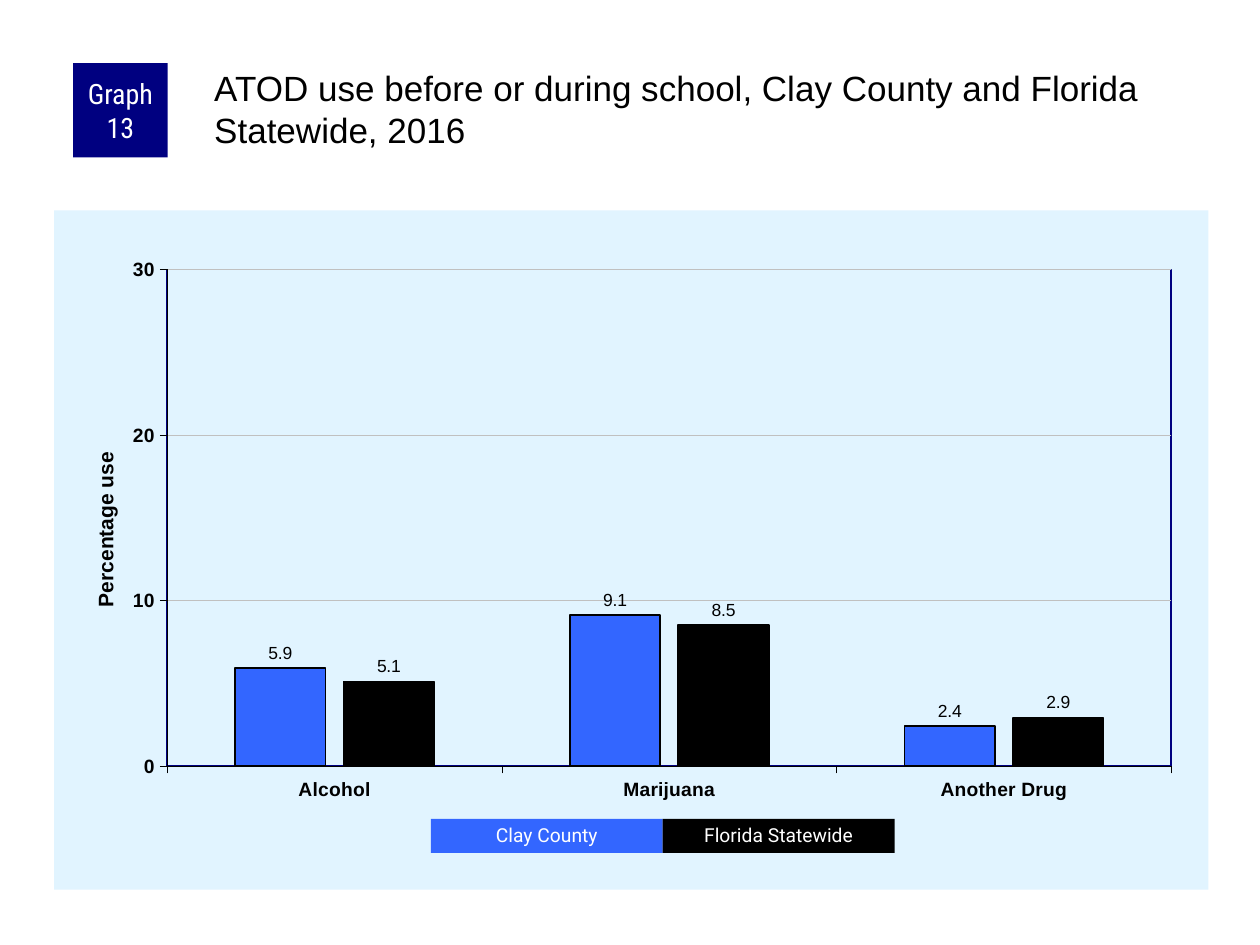
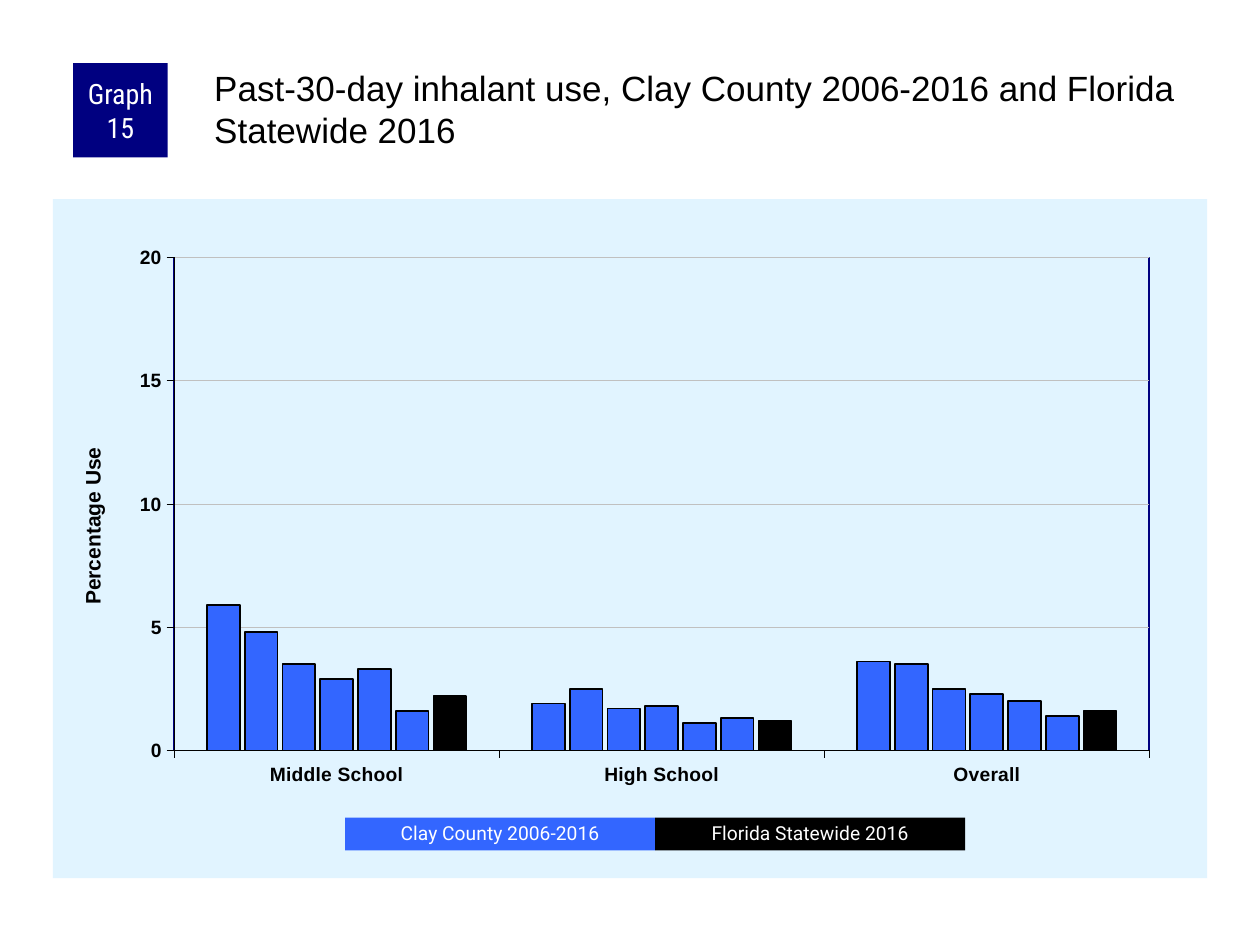
from lxml import etree
from pptx import Presentation
from pptx import util as u
from pptx.chart.data import CategoryChartData
from pptx.dml.color import RGBColor
from pptx.enum import chart as ch, shapes, text
from pptx.oxml.ns import qn

NAVY = RGBColor(0x00, 0x00, 0x80)
BLUE = RGBColor(0x33, 0x66, 0xFF)
PALE = RGBColor(0xE1, 0xF4, 0xFF)
GREY = RGBColor(0xC0, 0xC0, 0xC0)
BLACK = RGBColor(0x00, 0x00, 0x00)
WHITE = RGBColor(0xFF, 0xFF, 0xFF)


# Text
def style(font, size, color=BLACK, face="Arial", bold=False):
    font.size, font.name, font.bold = u.Pt(size), face, bold
    font.color.rgb = color


def put(frame, words, align=text.PP_ALIGN.LEFT, anchor=text.MSO_ANCHOR.MIDDLE,
        inset=(0, 0, 0, 0), spacing=1.0, **font):
    frame.word_wrap = True
    frame.auto_size = text.MSO_AUTO_SIZE.NONE
    frame.vertical_anchor = anchor
    (frame.margin_left, frame.margin_top,
     frame.margin_right, frame.margin_bottom) = map(u.Inches, inset)
    para = frame.paragraphs[0]
    para.alignment, para.line_spacing = align, spacing
    run = para.add_run()
    run.text = words
    style(run.font, **font)


# Shapes
def add_box(slide, at, fill, words, **format):
    box = slide.shapes.add_shape(shapes.MSO_SHAPE.RECTANGLE, *map(u.Inches, at))
    box.shadow.inherit = False
    box.fill.solid()
    box.fill.fore_color.rgb = fill
    box.line.fill.background()
    put(box.text_frame, words, align=text.PP_ALIGN.CENTER, color=WHITE, **format)


def add_head(slide, number, words):
    title = slide.shapes.title
    title.left, title.top, title.width, title.height = map(
        u.Inches, (1.67, 0.5, 7.92, 0.83))
    put(title.text_frame, words, anchor=text.MSO_ANCHOR.TOP,
        inset=(0.03, 0.03, 0, 0), size=20)
    add_box(slide, (0.58, 0.5, 0.75, 0.75), NAVY, f"Graph {number}",
            inset=(0.05, 0, 0.05, 0), size=16, face="Roboto Condensed")


def add_key(slide, left, top, width, height, names):
    for i, (name, fill) in enumerate(zip(names, (BLUE, BLACK))):
        add_box(slide, (left + i * width, top, width, height), fill, name,
                spacing=0.9, size=11, face="Roboto")


# Chart parts that need XML
def place(node, index, inner=False, **spots):
    for old in node.findall(qn("c:layout")):
        node.remove(old)
    layout = etree.Element(qn("c:layout"))
    manual = etree.SubElement(layout, qn("c:manualLayout"))
    if inner:
        etree.SubElement(manual, qn("c:layoutTarget"), val="inner")
    for side in "xy":
        etree.SubElement(manual, qn(f"c:{side}Mode"), val="edge")
    for side, value in spots.items():
        etree.SubElement(manual, qn(f"c:{side}"), val=str(value))
    node.insert(index, layout)


def paint(parent, color):
    solid = etree.SubElement(parent, qn("a:solidFill"))
    etree.SubElement(solid, qn("a:srgbClr"), val=str(color))


def back(chart):
    room = chart.element.find(qn("c:chart"))
    area = etree.Element(qn("c:spPr"))
    paint(area, PALE)
    edge = etree.SubElement(area, qn("a:ln"))
    etree.SubElement(edge, qn("a:noFill"))
    room.addnext(area)
    plot = room.find(qn("c:plotArea"))
    frame = etree.SubElement(plot, qn("c:spPr"))
    etree.SubElement(frame, qn("a:noFill"))
    paint(etree.SubElement(frame, qn("a:ln"), w=str(u.Pt(1))), NAVY)
    return plot


def set_line(line, color, width):
    line.color.rgb, line.width = color, u.Pt(width)


def set_axis(axis):
    axis.major_tick_mark = ch.XL_TICK_MARK.OUTSIDE
    axis.minor_tick_mark = ch.XL_TICK_MARK.NONE
    style(axis.tick_labels.font, 11, bold=True)
    set_line(axis.format.line, BLACK, 0.25)


def add_bars(slide, at, cats, rows, top, step, gap, overlap, plot, label, spot,
             marks=False):
    data = CategoryChartData(number_format="0.0")
    data.categories = cats
    for i, row in enumerate(rows, 1):
        data.add_series(f"Series {i}", row)
    chart = slide.shapes.add_chart(
        ch.XL_CHART_TYPE.COLUMN_CLUSTERED, *map(u.Inches, at), data).chart
    chart.has_legend = chart.has_title = False
    style(chart.font, 10)
    area = back(chart)
    place(area, 0, inner=True, **dict(zip("xywh", plot)))

    # Axes
    set_axis(chart.category_axis)
    axis = chart.value_axis
    set_axis(axis)
    axis.minimum_scale, axis.maximum_scale, axis.major_unit = 0, top, step
    axis.tick_labels.number_format = "0"
    axis.tick_labels.number_format_is_linked = False
    axis.has_major_gridlines = True
    set_line(axis.major_gridlines.format.line, GREY, 0.25)
    run = axis.axis_title.text_frame.paragraphs[0].add_run()
    run.text = label
    style(run.font, 12, bold=True)
    title = area.find(qn("c:valAx")).find(qn("c:title"))
    place(title, 1, **dict(zip("xy", spot)))

    # Bars: the last series is the state
    bars = chart.plots[0]
    bars.gap_width, bars.overlap, bars.vary_by_categories = gap, overlap, False
    for i, row in enumerate(bars.series, 1):
        row.format.fill.solid()
        row.format.fill.fore_color.rgb = BLACK if i == len(rows) else BLUE
        set_line(row.format.line, BLACK, 1)
    if marks:
        bars.has_data_labels = True
        labels = bars.data_labels
        labels.show_value = True
        labels.number_format, labels.number_format_is_linked = "0.0", False
        labels.position = ch.XL_LABEL_POSITION.OUTSIDE_END
        style(labels.font, 10)


def main():
    deck = Presentation()
    deck.slide_width, deck.slide_height = u.Inches(10), u.Inches(7.5)
    layout = deck.slide_layouts[5]

    # Use at school
    slide = deck.slides.add_slide(layout)
    add_head(slide, 13, "ATOD use before or during school, Clay County and "
                        "Florida Statewide, 2016")
    add_bars(slide, (0.43, 1.67, 9.16, 5.39),
             ("Alcohol", "Marijuana", "Another Drug"),
             ((5.9, 9.1, 2.4), (5.1, 8.5, 2.9)),
             top=30, step=10, gap=150, overlap=-20,
             plot=(0.098, 0.087, 0.87, 0.731),
             label="Percentage use", spot=(0.03, 0.35), marks=True)
    add_key(slide, 3.42, 6.5, 1.84, 0.27, ("Clay County", "Florida Statewide"))

    # Inhalants over the years
    slide = deck.slides.add_slide(layout)
    add_head(slide, 15, "Past-30-day inhalant use, Clay County 2006-2016 and "
                        "Florida Statewide 2016")
    add_bars(slide, (0.42, 1.58, 9.16, 5.39),
             ("Middle School", "High School", "Overall"),
             ((5.9, 1.9, 3.6), (4.8, 2.5, 3.5), (3.5, 1.7, 2.5),
              (2.9, 1.8, 2.3), (3.3, 1.1, 2), (1.6, 1.3, 1.4),
              (2.2, 1.2, 1.6)),
             top=20, step=5, gap=200, overlap=-15,
             plot=(0.105, 0.086, 0.845, 0.726),
             label="Percentage Use", spot=(0.02, 0.36))
    add_key(slide, 2.74, 6.49, 2.46, 0.26,
            ("Clay County 2006-2016", "Florida Statewide 2016"))

    deck.save("out.pptx")


if __name__ == "__main__":
    main()
